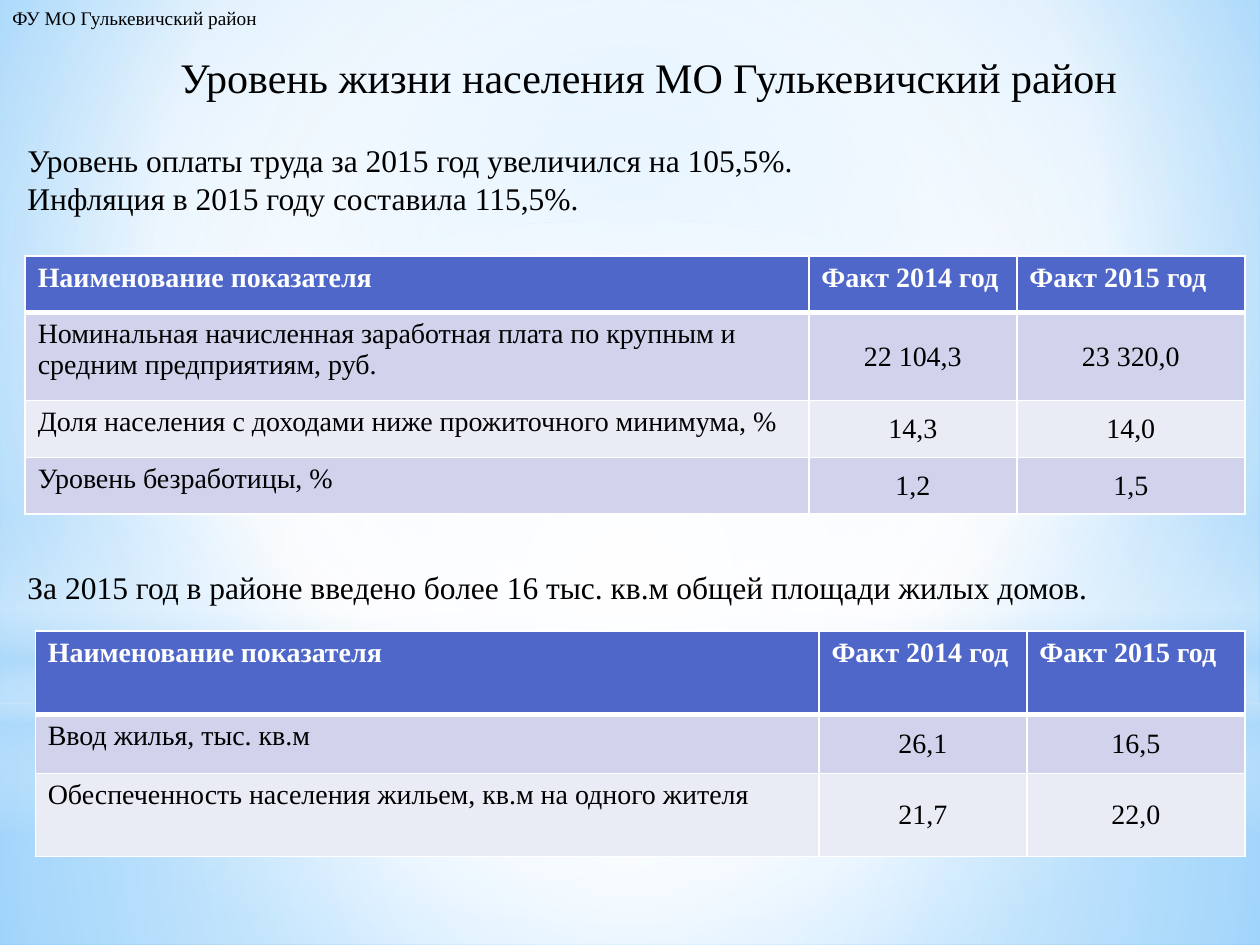
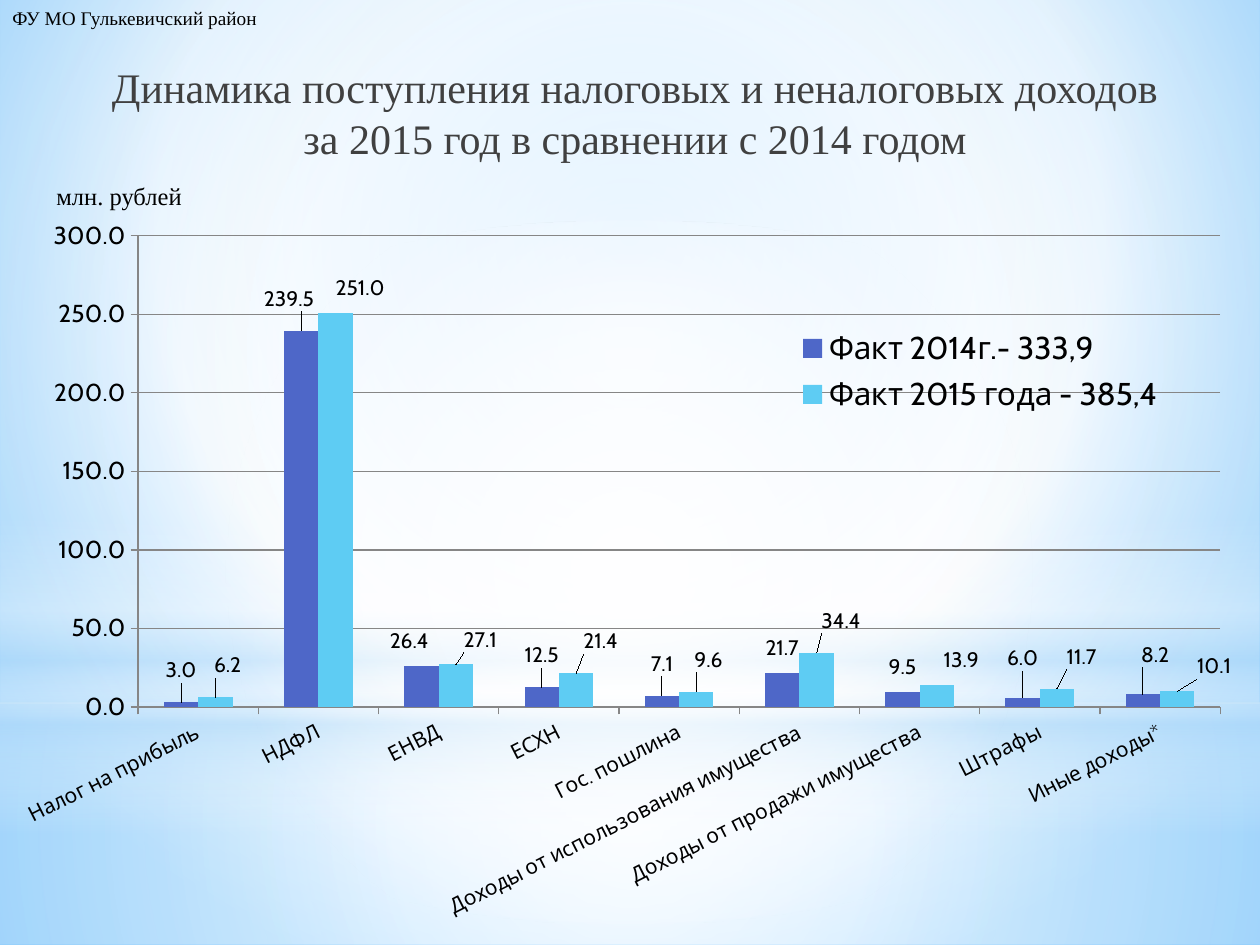
from dataclasses import dataclass
from itertools import chain

from lxml import etree
from pptx import Presentation
from pptx import util as u
from pptx.chart import data as chart_data
from pptx.dml.color import RGBColor
from pptx.enum import chart as charts, shapes, text
from pptx.oxml import ns, parse_xml

COLOURS = {
    "black": "000000",
    "title_grey": "404040",
    "white": "FFFFFF",
    "header": "4E67C8",
    "odd_row": "D0D3EB",
    "even_row": "E9EBF5",
    "year_2014": "4E67C8",
    "year_2015": "5ECCF3",
    "grid": "868686",
    "sky": "9ED5FF",
    "haze": "B4DCFA",
    "edge": "5BB9FF",
}
SERIF = "Times New Roman"
SANS = "Cabin"
ALIGN = text.PP_ALIGN


@dataclass(frozen=True)
class Box:
    left: float
    top: float
    width: float
    height: float

    def lengths(self) -> list:
        return [u.Inches(value) for value in (self.left, self.top, self.width, self.height)]


@dataclass(frozen=True)
class Gradient:
    stops: tuple
    focus: tuple | None = (50, 50, 50, 50)


@dataclass(frozen=True)
class Glow:
    box: Box
    gradient: Gradient
    kind: shapes.MSO_SHAPE = shapes.MSO_SHAPE.RECTANGLE


@dataclass(frozen=True)
class Label:
    box: Box
    lines: tuple
    size: float
    align: text.PP_ALIGN = ALIGN.LEFT
    wrap: bool = False
    colour: str = "black"


@dataclass(frozen=True)
class IndicatorTable:
    left: float
    top: float
    widths: tuple
    heights: tuple
    rows: tuple


@dataclass(frozen=True)
class YearSeries:
    name: str
    colour: str
    values: tuple
    label_shifts: tuple


BACKGROUND = Gradient(
    (("sky", 0, 100), ("white", 60, 100), ("edge", 100, 100)), (20, 10, 20, 60))
GLOWS = (
    Glow(Box(0, 5.58, 10, 1.92),
         Gradient((("white", 0, 91), ("white", 37, 76), ("haze", 100, 79)))),
    Glow(Box(0, 0, 10, 5.58),
         Gradient((("white", 0, 89), ("white", 48, 62), ("haze", 100, 79)))),
    Glow(Box(0, 4.12, 10, 2.5),
         Gradient((("white", 0, 0), ("white", 29, 30), ("haze", 45, 40),
                   ("white", 55, 26), ("haze", 65, 60), ("white", 100, 0)), None)),
    Glow(Box(0, 1.75, 10, 5.58),
         Gradient((("white", 0, 100), ("white", 56, 0))), shapes.MSO_SHAPE.OVAL),
)
DEPARTMENT = Label(Box(0, 0, 2.2, 0.29), ("ФУ МО Гулькевичский район",), 11)

LIVING_TITLE = Label(
    Box(1.33, 0.36, 7.72, 0.5), ("Уровень жизни населения МО Гулькевичский район",), 24)
LIVING_NOTES = (
    Label(Box(0.12, 1.07, 9.76, 0.71),
          ("Уровень оплаты труда за 2015 год увеличился на 105,5%.",
           "Инфляция в 2015 году составила 115,5%."), 18, ALIGN.JUSTIFY, True),
    Label(Box(0.12, 4.46, 9.76, 0.4),
          ("За 2015 год в районе введено более 16 тыс. кв.м общей площади жилых домов.",),
          18, ALIGN.JUSTIFY, True),
)
TABLE_HEADER = ("Наименование показателя", "Факт 2014 год", "Факт 2015 год")
LIVING_TABLES = (
    IndicatorTable(0.2, 2.03, (6.22, 1.65, 1.81), (0.45, 0.7, 0.45, 0.45), (
        TABLE_HEADER,
        ("Номинальная начисленная заработная плата по крупным и средним предприятиям, руб.",
         "22 104,3", "23 320,0"),
        ("Доля населения с доходами ниже прожиточного минимума, %", "14,3", "14,0"),
        ("Уровень безработицы, %", "1,2", "1,5"),
    )),
    IndicatorTable(0.28, 5.01, (6.22, 1.65, 1.73), (0.66, 0.47, 0.66), (
        TABLE_HEADER,
        ("Ввод жилья, тыс. кв.м", "26,1", "16,5"),
        ("Обеспеченность населения жильем, кв.м на одного жителя", "21,7", "22,0"),
    )),
)

REVENUE_TITLE = Label(
    Box(0.67, 0.44, 8.74, 0.79),
    ("Динамика поступления налоговых и неналоговых доходов за 2015 год в сравнении с 2014 годом",),
    24, ALIGN.CENTER, True, "title_grey")
REVENUE_UNIT = Label(Box(0.35, 1.39, 1.1, 0.31), ("млн. рублей",), 14)
REVENUE_BOX = Box(0.12, 1.7, 9.76, 5.67)
REVENUE_KINDS = (
    "Налог на прибыль", "НДФЛ", "ЕНВД", "ЕСХН", "Гос. пошлина",
    "Доходы от использования имущества", "Доходы от продажи имущества",
    "Штрафы", "Иные доходы*")
REVENUE_YEARS = (
    YearSeries("Факт 2014г.- 333,9", "year_2014",
               (3, 239.5, 26.4, 12.5, 7.1, 21.7, 9.5, 6, 8.2),
               ((0, -0.02), (-0.01, -0.02), (-0.01, -0.01), (0, -0.02), (0, -0.02),
                (0, -0.01), (0, -0.01), (0, -0.03), (0.01, -0.03))),
    YearSeries("Факт 2015 года - 385,4", "year_2015",
               (6.2, 251, 27.1, 21.4, 9.6, 34.4, 13.9, 11.7, 10.1),
               ((0.01, -0.02), (0.02, -0.01), (0.02, -0.01), (0.02, -0.02), (0.01, -0.02),
                (0.02, -0.02), (0.02, -0.01), (0.02, -0.02), (0.03, -0.01))),
)


def rgb(name: str) -> RGBColor:
    return RGBColor.from_string(COLOURS[name])


def paint_gradient(properties, gradient: Gradient) -> None:
    stops = "".join(
        f'<a:gs pos="{position * 1000}"><a:srgbClr val="{COLOURS[colour]}">'
        f'<a:alpha val="{alpha * 1000}"/></a:srgbClr></a:gs>'
        for colour, position, alpha in gradient.stops)
    direction = '<a:lin ang="5400000" scaled="0"/>'
    if gradient.focus:
        left, top, right, bottom = (side * 1000 for side in gradient.focus)
        direction = (f'<a:path path="circle"><a:fillToRect l="{left}" t="{top}" '
                     f'r="{right}" b="{bottom}"/></a:path>')
    fill = parse_xml(f'<a:gradFill {ns.nsdecls("a")} rotWithShape="1">'
                     f'<a:gsLst>{stops}</a:gsLst>{direction}</a:gradFill>')
    properties.replace(properties.find(ns.qn("a:solidFill")), fill)


def decorate_master(master, slide) -> None:
    master.background.fill.solid()
    paint_gradient(master.element.xpath("./p:cSld/p:bg/p:bgPr")[0], BACKGROUND)
    for index, glow in enumerate(GLOWS):
        shape = slide.shapes.add_shape(glow.kind, *glow.box.lengths())
        shape.shadow.inherit = False
        shape.line.fill.background()
        shape.fill.solid()
        paint_gradient(shape.element.spPr, glow.gradient)
        shape.element.nvSpPr.cNvPr.set("id", str(100 + index))
        master.shapes.element.insert(2 + index, shape.element)


def style_paragraph(paragraph, size: float, colour: str, align: text.PP_ALIGN,
                    bold: bool = False) -> None:
    paragraph.alignment = align
    paragraph.font.name = SERIF
    paragraph.font.size = u.Pt(size)
    paragraph.font.bold = bold
    paragraph.font.color.rgb = rgb(colour)


def write_label(shape, label: Label) -> None:
    shape.left, shape.top, shape.width, shape.height = label.box.lengths()
    frame = shape.text_frame
    frame.text = "\n".join(label.lines)
    frame.word_wrap = label.wrap
    frame.auto_size = text.MSO_AUTO_SIZE.NONE
    frame.vertical_anchor = text.MSO_ANCHOR.TOP
    for paragraph in frame.paragraphs:
        style_paragraph(paragraph, label.size, label.colour, label.align)


def add_label(slide, label: Label) -> None:
    write_label(slide.shapes.add_textbox(*label.box.lengths()), label)


def add_borders(cell, bottom: float) -> None:
    properties = cell._tc.get_or_add_tcPr()
    for index, (side, points) in enumerate((("L", 1), ("R", 1), ("T", 1), ("B", bottom))):
        properties.insert(index, parse_xml(
            f'<a:ln{side} {ns.nsdecls("a")} w="{u.Pt(points)}"><a:solidFill>'
            f'<a:srgbClr val="{COLOURS["white"]}"/></a:solidFill></a:ln{side}>'))


def add_indicator_table(slide, design: IndicatorTable) -> None:
    box = Box(design.left, design.top, sum(design.widths), sum(design.heights))
    table = slide.shapes.add_table(
        len(design.rows), len(design.widths), *box.lengths()).table
    for column, width in zip(table.columns, design.widths):
        column.width = u.Inches(width)
    for row_index, (row, height) in enumerate(zip(design.rows, design.heights)):
        table.rows[row_index].height = u.Inches(height)
        header = row_index == 0
        band = "header" if header else "odd_row" if row_index % 2 else "even_row"
        for column_index, value in enumerate(row):
            cell = table.cell(row_index, column_index)
            cell.text = value
            cell.fill.solid()
            cell.fill.fore_color.rgb = rgb(band)
            number = column_index > 0 and not header
            cell.vertical_anchor = text.MSO_ANCHOR.MIDDLE if number else text.MSO_ANCHOR.TOP
            style_paragraph(cell.text_frame.paragraphs[0], 16, "white" if header else "black",
                            ALIGN.CENTER if number else ALIGN.LEFT, header)
            above_header = row_index == 1
            add_borders(cell, 3 if header else 1)
            if above_header:
                cell._tc.tcPr.find(ns.qn("a:lnT")).set("w", str(u.Pt(3)))


def set_layout(parent, index: int, **settings) -> None:
    for previous in parent.findall(ns.qn("c:layout")):
        parent.remove(previous)
    layout = etree.Element(ns.qn("c:layout"))
    manual = etree.SubElement(layout, ns.qn("c:manualLayout"))
    for name, value in settings.items():
        etree.SubElement(manual, ns.qn(f"c:{name}")).set("val", str(value))
    parent.insert(index, layout)


def add_revenue_chart(slide) -> None:
    data = chart_data.CategoryChartData(number_format="0.0")
    data.categories = REVENUE_KINDS
    for year in REVENUE_YEARS:
        data.add_series(year.name, year.values)
    chart = slide.shapes.add_chart(
        charts.XL_CHART_TYPE.COLUMN_CLUSTERED, *REVENUE_BOX.lengths(), data).chart
    chart.has_title = False
    chart.font.name = SANS
    chart.font.size = u.Pt(18)
    chart.font.color.rgb = rgb("black")

    plot = chart.plots[0]
    plot.gap_width = 150
    plot.vary_by_categories = False
    for series, year in zip(plot.series, REVENUE_YEARS):
        series.format.fill.solid()
        series.format.fill.fore_color.rgb = rgb(year.colour)
        labels = series.data_labels
        labels.show_value = True
        labels.number_format = "0.0"
        labels.number_format_is_linked = False
        labels.font.size = u.Pt(12)
        for index in range(len(year.values)):
            label = series.points[index].data_label
            label.font.size = u.Pt(12)
            label.position = charts.XL_LABEL_POSITION.OUTSIDE_END
    shifts = chain.from_iterable(year.label_shifts for year in REVENUE_YEARS)
    for label, (across, down) in zip(chart.element.xpath(".//c:dLbl"), shifts):
        set_layout(label, 1, x=across, y=down)

    for axis, size in ((chart.category_axis, 12), (chart.value_axis, 14)):
        axis.major_tick_mark = charts.XL_TICK_MARK.OUTSIDE
        axis.tick_labels.font.size = u.Pt(size)
        axis.format.line.color.rgb = rgb("grid")
    chart.value_axis.tick_labels.number_format = "0.0"
    chart.value_axis.tick_labels.number_format_is_linked = False
    chart.value_axis.major_gridlines.format.line.color.rgb = rgb("grid")
    chart.element.xpath(".//c:catAx/c:txPr/a:bodyPr")[0].set("rot", str(-27 * 60000))

    chart.has_legend = True
    chart.legend.position = charts.XL_LEGEND_POSITION.RIGHT
    chart.legend.include_in_layout = True
    chart.legend.font.size = u.Pt(18)
    set_layout(chart.element.xpath(".//c:legend")[0], 1,
               xMode="edge", yMode="edge", x=0.63, y=0.15, w=0.31, h=0.14)
    set_layout(chart.element.xpath(".//c:plotArea")[0], 0, layoutTarget="inner",
               xMode="edge", yMode="edge", x=0.1, y=0.03, w=0.88, h=0.66)


def add_titled_slide(presentation, title: Label):
    slide = presentation.slides.add_slide(presentation.slide_layouts[5])
    write_label(slide.shapes.title, title)
    add_label(slide, DEPARTMENT)
    return slide


def main() -> None:
    presentation = Presentation()
    presentation.slide_width = u.Inches(10)
    presentation.slide_height = u.Inches(7.5)

    living = add_titled_slide(presentation, LIVING_TITLE)
    decorate_master(presentation.slide_master, living)
    for note in LIVING_NOTES:
        add_label(living, note)
    for table in LIVING_TABLES:
        add_indicator_table(living, table)

    revenue = add_titled_slide(presentation, REVENUE_TITLE)
    add_label(revenue, REVENUE_UNIT)
    add_revenue_chart(revenue)
    presentation.save("out.pptx")


if __name__ == "__main__":
    main()
